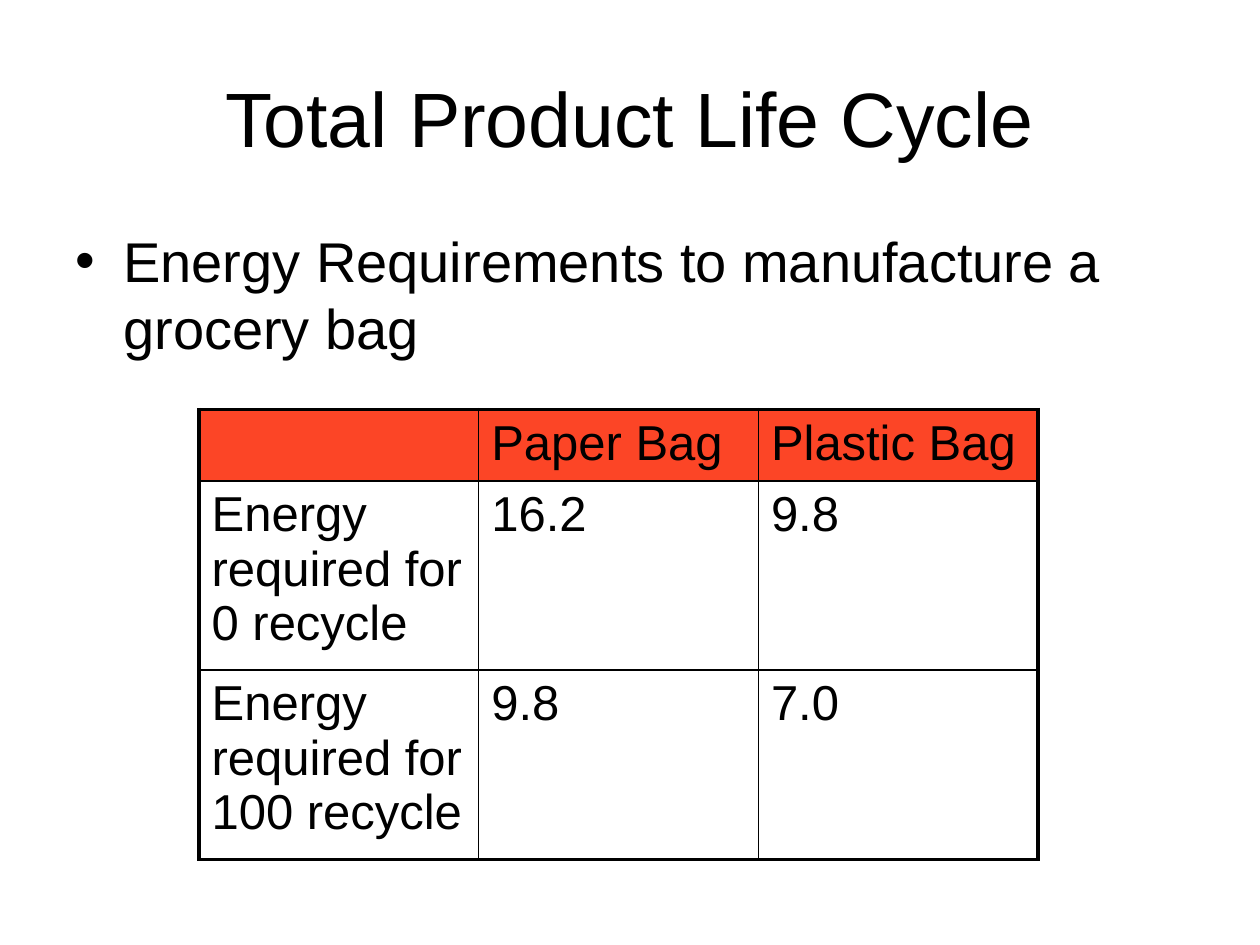
from dataclasses import dataclass

from lxml import etree
from pptx import Presentation
from pptx import util as u
from pptx.dml.color import RGBColor
from pptx.enum import text
from pptx.oxml.ns import qn

WIDTH, HEIGHT = 10, 7.5
FONT, BLACK, HEADER_FILL = "Arial", "000000", "FC4526"
OUTER, INNER = 2.25, 1
COLUMN_WIDTH, ROW_HEIGHTS = 2.22, (0.54, 1.48, 1.48)
ROWS = (
    ("", "Paper Bag", "Plastic Bag"),
    ("Energy required for 0 recycle", "16.2", "9.8"),
    ("Energy required for 100 recycle", "9.8", "7.0"),
)


@dataclass
class TextBlock:
    """Wording with its box, given as shares of the slide's size."""
    wording: str
    left: float
    top: float
    width: float
    height: float
    size: float
    centred: bool = False
    bullet: bool = False


BLOCKS = (
    TextBlock("Total Product Life Cycle", 0.05, 0.04, 0.9, 1 / 6, 44, centred=True),
    TextBlock("Energy Requirements to manufacture a grocery bag",
              0.05, 0.7 / 3, 0.9, 0.66, 32, bullet=True),
)


def colour(value: str) -> RGBColor:
    return RGBColor.from_string(value)


def style(para, size: float) -> None:
    for span in para.runs:
        span.font.name = FONT
        span.font.size = u.Pt(size)
        span.font.color.rgb = colour(BLACK)


def add_bullet(para, indent: float) -> None:
    properties = para._p.get_or_add_pPr()
    properties.set("marL", str(u.Inches(indent)))
    properties.set("indent", str(-u.Inches(indent)))
    etree.SubElement(properties, qn("a:buFont")).set("typeface", FONT)
    etree.SubElement(properties, qn("a:buChar")).set("char", "•")


def add_text(page, block: TextBlock) -> None:
    box = page.shapes.add_textbox(
        u.Inches(block.left * WIDTH), u.Inches(block.top * HEIGHT),
        u.Inches(block.width * WIDTH), u.Inches(block.height * HEIGHT))
    frame = box.text_frame
    frame.word_wrap = True
    frame.text = block.wording
    para = frame.paragraphs[0]
    if block.centred:
        frame.vertical_anchor = text.MSO_ANCHOR.MIDDLE
        para.alignment = text.PP_ALIGN.CENTER
    if block.bullet:
        add_bullet(para, 0.38)
    style(para, block.size)


def set_borders(cell, row: int, column: int) -> None:
    """Draw thick lines on the table's edge and thin ones inside; call before filling."""
    last_row, last_column = len(ROWS) - 1, len(ROWS[0]) - 1
    on_edge = {"lnL": column == 0, "lnR": column == last_column,
               "lnT": row == 0, "lnB": row == last_row}
    properties = cell._tc.get_or_add_tcPr()
    for side, outer in on_edge.items():
        line = etree.SubElement(properties, qn(f"a:{side}"))
        line.set("w", str(u.Pt(OUTER if outer else INNER)))
        fill = etree.SubElement(line, qn("a:solidFill"))
        etree.SubElement(fill, qn("a:srgbClr")).set("val", BLACK)


def add_energy_table(page) -> None:
    table = page.shapes.add_table(
        len(ROWS), len(ROWS[0]), u.Inches(1.58), u.Inches(3.25),
        u.Inches(COLUMN_WIDTH * len(ROWS[0])), u.Inches(sum(ROW_HEIGHTS))).table
    for column in table.columns:
        column.width = u.Inches(COLUMN_WIDTH)
    for row, (height, wordings) in enumerate(zip(ROW_HEIGHTS, ROWS)):
        table.rows[row].height = u.Inches(height)
        for column, wording in enumerate(wordings):
            cell = table.cell(row, column)
            set_borders(cell, row, column)
            if row == 0:
                cell.fill.solid()
                cell.fill.fore_color.rgb = colour(HEADER_FILL)
            else:
                cell.fill.background()
            cell.text = wording
            para = cell.text_frame.paragraphs[0]
            para.font.bold = False
            style(para, 28)


def main() -> None:
    deck = Presentation()
    deck.slide_width, deck.slide_height = u.Inches(WIDTH), u.Inches(HEIGHT)
    page = deck.slides.add_slide(deck.slide_layouts[6])
    for block in BLOCKS:
        add_text(page, block)
    add_energy_table(page)
    deck.save("out.pptx")


if __name__ == "__main__":
    main()
